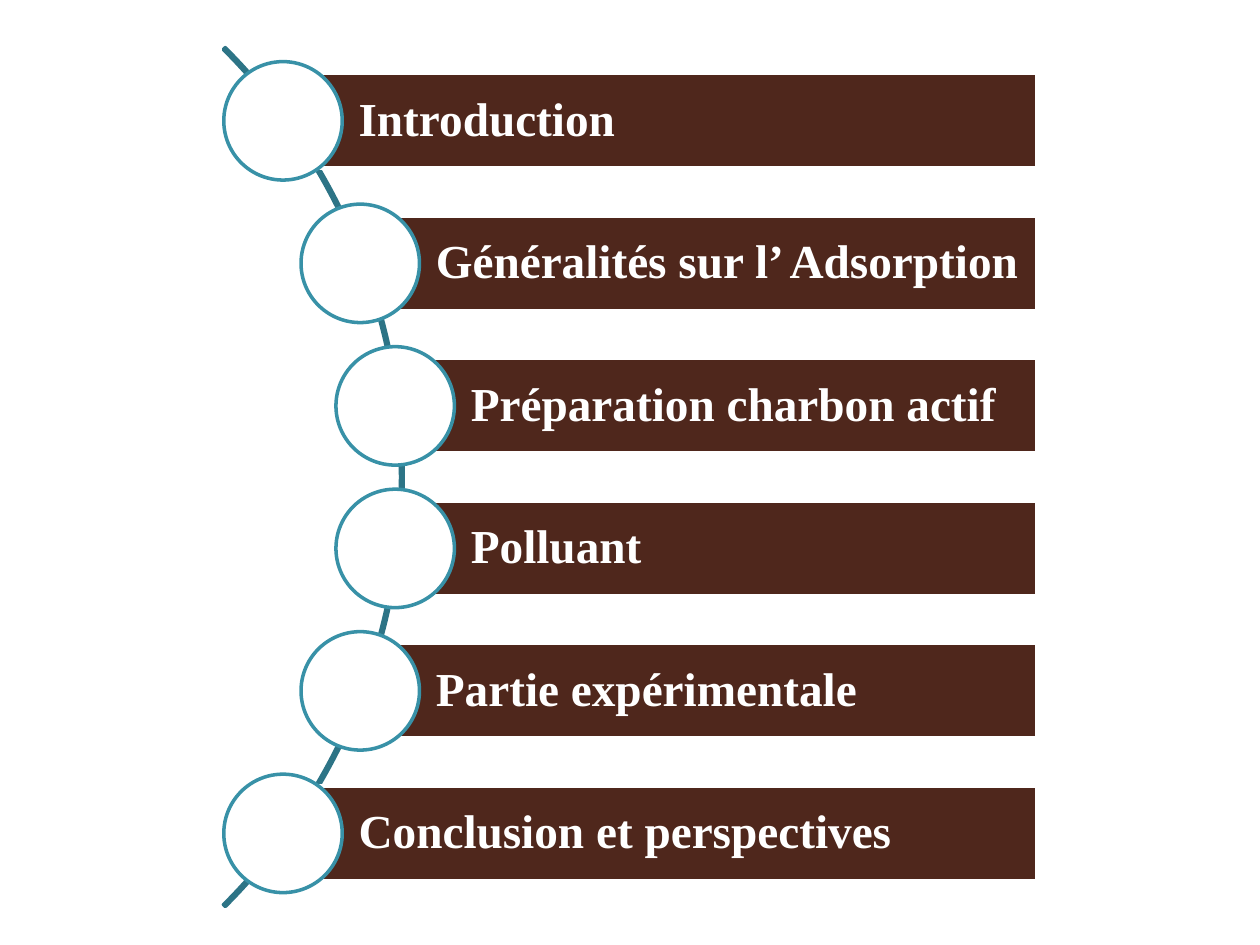
"""Build an agenda slide whose six bars hang from a circular arc."""
import math
from dataclasses import dataclass

from pptx import Presentation
from pptx import util as u
from pptx.dml.color import RGBColor
from pptx.enum import shapes, text

COLUMNS, ROWS = 100, 75
CELL = u.Inches(0.1)
COLORS = {"bar": "4F271C", "ring": "3891A7", "arc": "2D7486", "white": "FFFFFF"}
FONT = "Times New Roman"
TOPICS = [
    "Introduction",
    "Généralités sur l’ Adsorption",
    "Préparation charbon actif",
    "Polluant",
    "Partie expérimentale",
    "Conclusion et perspectives",
]
ARC_X, ARC_Y, ARC_RADIUS = -16.2, 37.87, 48.2
CENTER_RADIUS = 47.9
PITCH = 11.31
BAR_RIGHT, BAR_HEIGHT, CIRCLE_SIZE = 82.3, 7.5, 9.4


@dataclass(frozen=True)
class Entry:
    """A topic and the grid position of its circle's centre."""
    label: str
    x: float
    y: float


def place_entries(labels: list[str]) -> list[Entry]:
    """Spread the labels evenly down the arc."""
    middle = (len(labels) - 1) / 2
    offsets = [(index - middle) * PITCH for index in range(len(labels))]
    return [
        Entry(label, ARC_X + math.sqrt(CENTER_RADIUS**2 - dy**2), ARC_Y + dy)
        for label, dy in zip(labels, offsets)
    ]


def add_box(page, kind, left: float, top: float, width: float, height: float,
            line: str, fill: str | None = None):
    """Add a flat shape given in grid cells."""
    frame = [round(value * CELL) for value in (left, top, width, height)]
    box = page.shapes.add_shape(kind, *frame)
    box.shadow.inherit = False
    box.line.color.rgb = RGBColor.from_string(COLORS[line])
    box.line.width = u.Pt(2)
    if fill:
        box.fill.solid()
        box.fill.fore_color.rgb = RGBColor.from_string(COLORS[fill])
    else:
        box.fill.background()
    return box


def add_arc(page) -> None:
    """Draw the thin arc behind the entries."""
    size = 2 * ARC_RADIUS
    arc = add_box(page, shapes.MSO_SHAPE.BLOCK_ARC, ARC_X - ARC_RADIUS,
                  ARC_Y - ARC_RADIUS, size, size, "arc")
    for index, value in enumerate((189, 27, 0.0022)):
        arc.adjustments[index] = value


def add_entry(page, entry: Entry) -> None:
    """Draw one labelled bar and its circle."""
    bar = add_box(page, shapes.MSO_SHAPE.RECTANGLE, entry.x, entry.y - BAR_HEIGHT / 2,
                  BAR_RIGHT - entry.x, BAR_HEIGHT, "white", "bar")
    frame = bar.text_frame
    frame.text = entry.label
    frame.word_wrap = True
    frame.vertical_anchor = text.MSO_ANCHOR.MIDDLE
    frame.margin_left = u.Inches(0.6)
    frame.margin_right = frame.margin_top = frame.margin_bottom = u.Inches(0.07)
    para = frame.paragraphs[0]
    para.alignment = text.PP_ALIGN.LEFT
    para.line_spacing = 0.9
    font = para.runs[0].font
    font.name, font.size, font.bold = FONT, u.Pt(27), True
    font.color.rgb = RGBColor.from_string(COLORS["white"])
    add_box(page, shapes.MSO_SHAPE.OVAL, entry.x - CIRCLE_SIZE / 2,
            entry.y - CIRCLE_SIZE / 2, CIRCLE_SIZE, CIRCLE_SIZE, "ring", "white")


def main() -> None:
    """Create and save the deck."""
    deck = Presentation()
    deck.slide_width, deck.slide_height = COLUMNS * CELL, ROWS * CELL
    page = deck.slides.add_slide(deck.slide_layouts[6])
    add_arc(page)
    for entry in place_entries(TOPICS):
        add_entry(page, entry)
    deck.save("out.pptx")


if __name__ == "__main__":
    main()
